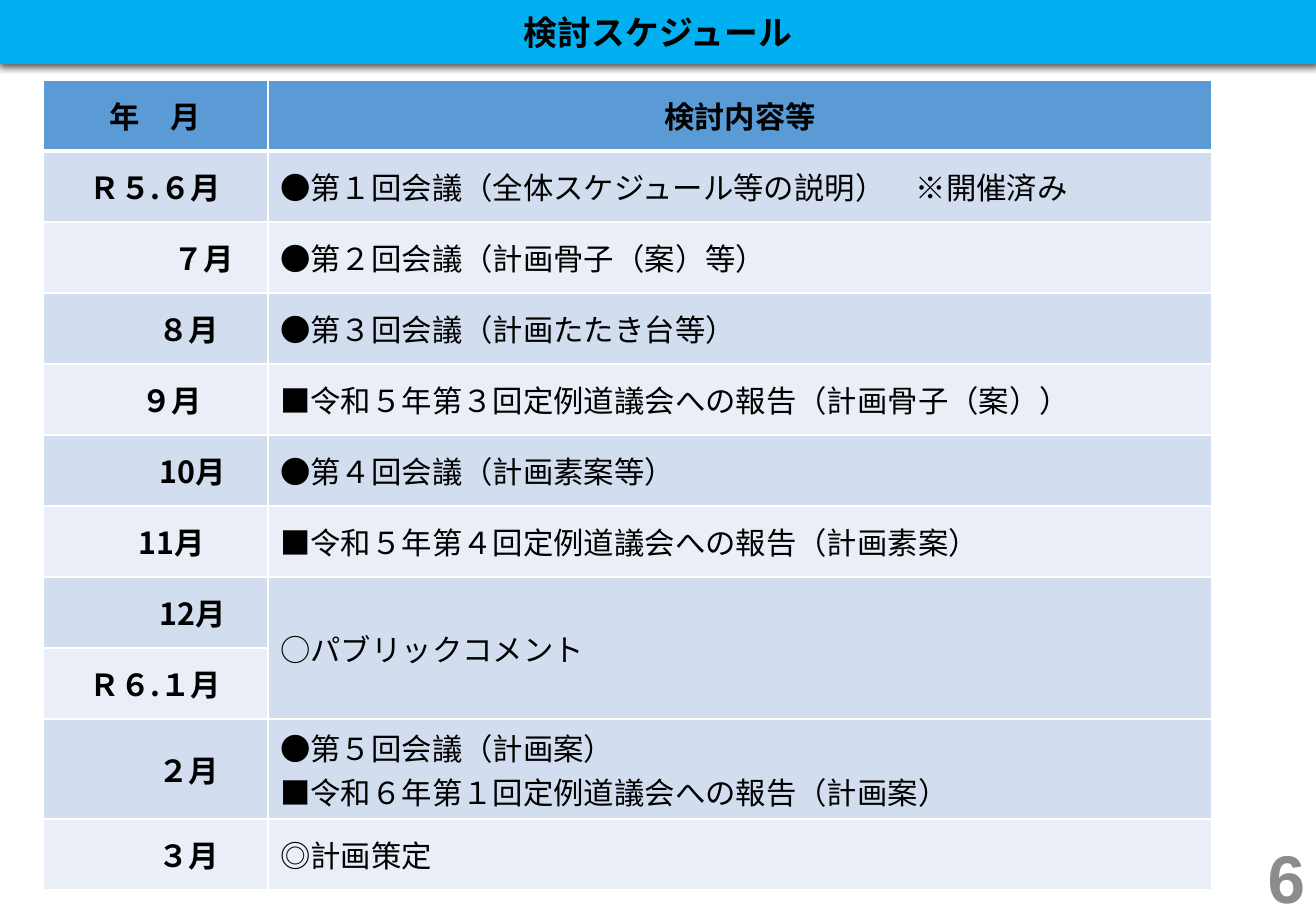
import pptx
import pptx.util
import pptx.dml.color
import pptx.enum.shapes
import pptx.enum.text
import pptx.oxml
import pptx.oxml.ns

RGB = pptx.dml.color.RGBColor
ALIGN = pptx.enum.text.PP_ALIGN
ANCHOR = pptx.enum.text.MSO_ANCHOR

BLACK = RGB(0x00, 0x00, 0x00)
WHITE = RGB(0xFF, 0xFF, 0xFF)
BANNER_BLUE = RGB(0x00, 0xB0, 0xF0)
HEADER_BLUE = RGB(0x5B, 0x9B, 0xD5)
BANDS = (RGB(0xD2, 0xDE, 0xEF), RGB(0xEA, 0xEF, 0xF7))
PAGE_GRAY = RGB(0x8C, 0x8C, 0x8C)
GOTHIC, LATIN, NUMERAL = "Noto Sans CJK JP", "Calibri", "Arial"

TITLE = "検討スケジュール"
PAGE = "6"
HEADINGS = ("年　月", "検討内容等")
# month, extra left indent in px, agenda lines
SCHEDULE = [
    ("Ｒ５.６月", 0, ["●第１回会議（全体スケジュール等の説明）　※開催済み"]),
    ("７月", 97, ["●第２回会議（計画骨子（案）等）"]),
    ("８月", 67, ["●第３回会議（計画たたき台等）"]),
    ("９月", 33, ["■令和５年第３回定例道議会への報告（計画骨子（案））"]),
    ("10月", 75, ["●第４回会議（計画素案等）"]),
    ("11月", 33, ["■令和５年第４回定例道議会への報告（計画素案）"]),
    ("12月", 75, ["○パブリックコメント"]),
    ("Ｒ６.１月", 0, []),
    ("２月", 67, ["●第５回会議（計画案）", "■令和６年第１回定例道議会への報告（計画案）"]),
    ("３月", 67, ["◎計画策定"]),
]

SLIDE_W, SLIDE_H = 1316, 911
BANNER_H = 64
TABLE_X, TABLE_Y = 43, 80
COLUMNS = (225, 944)
ROW_H, LINE_H = 71, 29
CELL_MARGIN = 12
PX = 914400 / 121.5


def px(length):
    return pptx.util.Emu(round(length * PX))


def write(frame, lines, size=18, font=GOTHIC, color=BLACK, bold=True, align=ALIGN.CENTER):
    frame.word_wrap = True
    for number, line in enumerate(lines):
        paragraph = frame.add_paragraph() if number else frame.paragraphs[0]
        paragraph.alignment = align
        run = paragraph.add_run()
        run.text = line
        run.font.size = pptx.util.Pt(size)
        run.font.name = font
        run.font.bold = bold
        run.font.color.rgb = color
        east_asian = pptx.oxml.parse_xml(
            f'<a:ea {pptx.oxml.ns.nsdecls("a")} typeface="{GOTHIC}"/>')
        run.font._element.find(pptx.oxml.ns.qn("a:latin")).addnext(east_asian)


def style_cell(cell, fill, top=1, bottom=1):
    cell.vertical_anchor = ANCHOR.MIDDLE
    cell.fill.solid()
    cell.fill.fore_color.rgb = fill
    properties = cell._tc.get_or_add_tcPr()
    edges = (("L", 1), ("R", 1), ("T", top), ("B", bottom))
    for position, (side, width) in enumerate(edges):
        properties.insert(position, pptx.oxml.parse_xml(
            f'<a:ln{side} {pptx.oxml.ns.nsdecls("a")} w="{pptx.util.Pt(width)}">'
            f'<a:solidFill><a:srgbClr val="{WHITE}"/></a:solidFill></a:ln{side}>'))


def add_banner(slide):
    banner = slide.shapes.add_shape(
        pptx.enum.shapes.MSO_SHAPE.RECTANGLE, 0, 0, px(SLIDE_W), px(BANNER_H))
    banner.fill.solid()
    banner.fill.fore_color.rgb = BANNER_BLUE
    banner.line.fill.background()
    banner.shadow.inherit = False
    effects = banner._element.spPr.find(pptx.oxml.ns.qn("a:effectLst"))
    effects.append(pptx.oxml.parse_xml(
        f'<a:outerShdw {pptx.oxml.ns.nsdecls("a")} blurRad="{pptx.util.Pt(4.5)}" '
        f'dist="{pptx.util.Pt(1.5)}" dir="5400000" algn="ctr" rotWithShape="0">'
        f'<a:srgbClr val="{BLACK}"><a:alpha val="63000"/></a:srgbClr></a:outerShdw>'))
    banner.text_frame.vertical_anchor = ANCHOR.MIDDLE
    write(banner.text_frame, [TITLE], size=20)


def add_page_number(slide):
    page = slide.shapes.add_textbox(px(1021), px(829), px(296), px(94))
    page.text_frame.vertical_anchor = ANCHOR.MIDDLE
    write(page.text_frame, [PAGE], size=40, font=NUMERAL, color=PAGE_GRAY, align=ALIGN.RIGHT)


def add_schedule(slide):
    count = len(SCHEDULE) + 1
    schedule = slide.shapes.add_table(
        count, len(COLUMNS), px(TABLE_X), px(TABLE_Y), px(sum(COLUMNS)), px(ROW_H * count)).table
    schedule.horz_banding = False
    for column, width in zip(schedule.columns, COLUMNS):
        column.width = px(width)
    schedule.rows[0].height = px(ROW_H)
    for column, heading in enumerate(HEADINGS):
        cell = schedule.cell(0, column)
        style_cell(cell, HEADER_BLUE, bottom=3)
        write(cell.text_frame, [heading])

    for row, (month, indent, agenda) in enumerate(SCHEDULE, 1):
        schedule.rows[row].height = px(ROW_H + LINE_H * max(len(agenda) - 1, 0))
        month_cell, agenda_cell = schedule.cell(row, 0), schedule.cell(row, 1)
        for cell in (month_cell, agenda_cell):
            style_cell(cell, BANDS[(row - 1) % 2], top=3 if row == 1 else 1)
        month_cell.margin_left = px(CELL_MARGIN + indent)
        write(month_cell.text_frame, [month])
        if agenda:
            write(agenda_cell.text_frame, agenda, font=LATIN, bold=False, align=ALIGN.LEFT)
        else:
            schedule.cell(row - 1, 1).merge(agenda_cell)


def main():
    deck = pptx.Presentation()
    deck.slide_width, deck.slide_height = px(SLIDE_W), px(SLIDE_H)
    slide = deck.slides.add_slide(deck.slide_layouts[6])
    add_banner(slide)
    add_page_number(slide)
    add_schedule(slide)
    deck.save("out.pptx")


if __name__ == "__main__":
    main()
